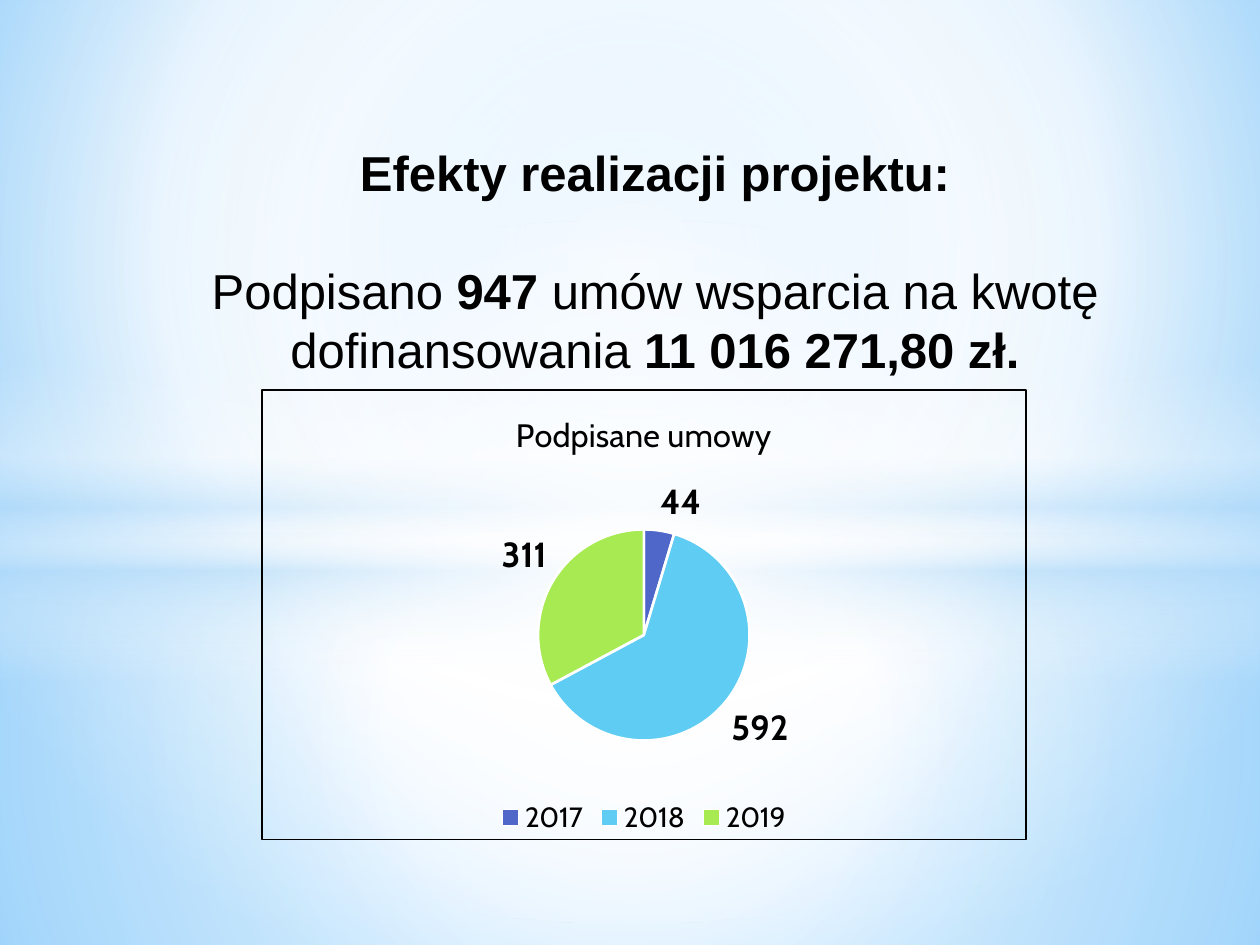
from lxml import etree
from pptx import Presentation
from pptx.chart.data import CategoryChartData
from pptx.dml.color import RGBColor
from pptx.enum.chart import XL_CHART_TYPE, XL_LABEL_POSITION, XL_LEGEND_POSITION
from pptx.enum.shapes import MSO_SHAPE
from pptx.enum.text import MSO_ANCHOR, PP_ALIGN
from pptx.oxml import parse_xml
from pptx.oxml.ns import nsdecls, qn
from pptx.util import Cm, Pt

PIE = XL_CHART_TYPE.PIE
OUTER = XL_LABEL_POSITION.OUTSIDE_END
BELOW = XL_LEGEND_POSITION.BOTTOM
RECT, OVAL = MSO_SHAPE.RECTANGLE, MSO_SHAPE.OVAL
CENTER, BOTTOM = PP_ALIGN.CENTER, MSO_ANCHOR.BOTTOM

COLORS = {
    "black": "000000", "white": "FFFFFF", "mist": "B4DCFA",
    "sky": "9ED5FF", "deep": "5BB9FF",
    "2017": "4E67C8", "2018": "5ECCF3", "2019": "A7EA52",
}
MIDDLE = (50, 50, 50, 50)


def shade(node, stops, focus=None):
    """Swap the solid fill in node for a gradient: circular round focus, else downward.

    Each stop is (position, colour name, opacity), all in percent."""
    grad = parse_xml(f'<a:gradFill {nsdecls("a")} rotWithShape="1"><a:gsLst/></a:gradFill>')
    for pos, name, alpha in stops:
        stop = etree.SubElement(grad[0], qn("a:gs"), pos=str(pos * 1000))
        color = etree.SubElement(stop, qn("a:srgbClr"), val=COLORS[name])
        if alpha < 100:
            etree.SubElement(color, qn("a:alpha"), val=str(alpha * 1000))
    if focus:
        ring = etree.SubElement(grad, qn("a:path"), path="circle")
        sides = {side: str(part * 1000) for side, part in zip("ltrb", focus)}
        etree.SubElement(ring, qn("a:fillToRect"), **sides)
    else:
        etree.SubElement(grad, qn("a:lin"), ang="5400000", scaled="0")
    old = node.find(".//" + qn("a:solidFill"))
    old.getparent().replace(old, grad)


def write(para, text, size=28, face="Arial", bold=False):
    run = para.add_run()
    run.text = text
    font = run.font
    font.size, font.name, font.bold = Pt(size), face, bold
    font.color.rgb = RGBColor.from_string(COLORS["black"])


prs = Presentation()
prs.slide_width, prs.slide_height = Cm(25.4), Cm(19.05)
slide = prs.slides.add_slide(prs.slide_layouts[6])

# Background and its soft bands of light
slide.background.fill.solid()
shade(slide.element, [(0, "sky", 100), (60, "white", 100), (100, "deep", 100)],
      (20, 10, 20, 60))
bands = [
    (RECT, 10.74, 8.31, MIDDLE,
     [(0, "white", 91), (37, "white", 76), (100, "mist", 79)]),
    (RECT, 0, 10.74, MIDDLE,
     [(0, "white", 89), (48, "white", 62), (100, "mist", 79)]),
    (RECT, 7.37, 6.35, None,
     [(0, "white", 0), (29, "white", 30), (45, "mist", 40),
      (55, "white", 26), (65, "mist", 60), (100, "white", 0)]),
    (OVAL, 4.45, 14.17, MIDDLE, [(0, "white", 100), (54, "white", 0)]),
]
for kind, top, height, focus, stops in bands:
    band = slide.shapes.add_shape(kind, 0, Cm(top), prs.slide_width, Cm(height))
    band.shadow.inherit = False
    band.line.fill.background()
    band.fill.solid()
    shade(band.element, stops, focus)

# Heading and summary
box = slide.shapes.add_textbox(Cm(1.7), Cm(1.93), Cm(23.01), Cm(5.82))
frame = box.text_frame
frame.word_wrap = True
frame.vertical_anchor = BOTTOM
head = frame.paragraphs[0]
head.alignment = CENTER
head.space_after = Pt(34)
write(head, "Efekty realizacji projektu:", bold=True)
body = frame.add_paragraph()
body.alignment = CENTER
for text, bold in [
    ("Podpisano", False), (" 947 ", True),
    ("umów wsparcia na kwotę dofinansowania ", False),
    ("11 016 271,80 zł.", True),
]:
    write(body, text, bold=bold)

# Pie of signed contracts
years = ["2017", "2018", "2019"]
data = CategoryChartData()
data.categories = years
data.add_series("Podpisane umowy", (44, 592, 311))
chart = slide.shapes.add_chart(
    PIE, Cm(5.26), Cm(7.85), Cm(15.44), Cm(9.09), data).chart
chart.has_title = True
write(chart.chart_title.text_frame.paragraphs[0], "Podpisane umowy",
      size=18.6, face="Cabin")
chart.chart_title.include_in_layout = False
chart.has_legend = True
chart.legend.position = BELOW
chart.legend.include_in_layout = False

plot = chart.plots[0]
plot.vary_by_categories = True
plot.has_data_labels = True
labels = plot.data_labels
labels.show_value = True
labels.position = OUTER
for font, size, bold in [(chart.font, 10, False), (chart.legend.font, 16, False),
                         (labels.font, 20, True)]:
    font.size, font.name, font.bold = Pt(size), "Cabin", bold
    font.color.rgb = RGBColor.from_string(COLORS["black"])

for i, year in enumerate(years):
    slice_ = plot.series[0].points[i].format
    slice_.fill.solid()
    slice_.fill.fore_color.rgb = RGBColor.from_string(COLORS[year])
    slice_.line.width = Pt(1.5)
    slice_.line.color.rgb = RGBColor.from_string(COLORS["white"])

# Chart border and the place of the pie inside it
root = chart.element
root.find(qn("c:chart")).addnext(parse_xml(
    f'<c:spPr {nsdecls("c", "a")}><a:noFill/><a:ln w="{Pt(1)}"><a:solidFill>'
    f'<a:srgbClr val="{COLORS["black"]}"/></a:solidFill></a:ln></c:spPr>'))
area = root.find(".//" + qn("c:plotArea"))
for old in area.findall(qn("c:layout")):
    area.remove(old)
layout = etree.Element(qn("c:layout"))
area.insert(0, layout)
manual = etree.SubElement(layout, qn("c:manualLayout"))
for tag, val in [("layoutTarget", "inner"), ("xMode", "edge"), ("yMode", "edge"),
                 ("x", "0.36"), ("y", "0.31"), ("w", "0.28"), ("h", "0.47")]:
    etree.SubElement(manual, qn("c:" + tag), val=val)

prs.save("out.pptx")
